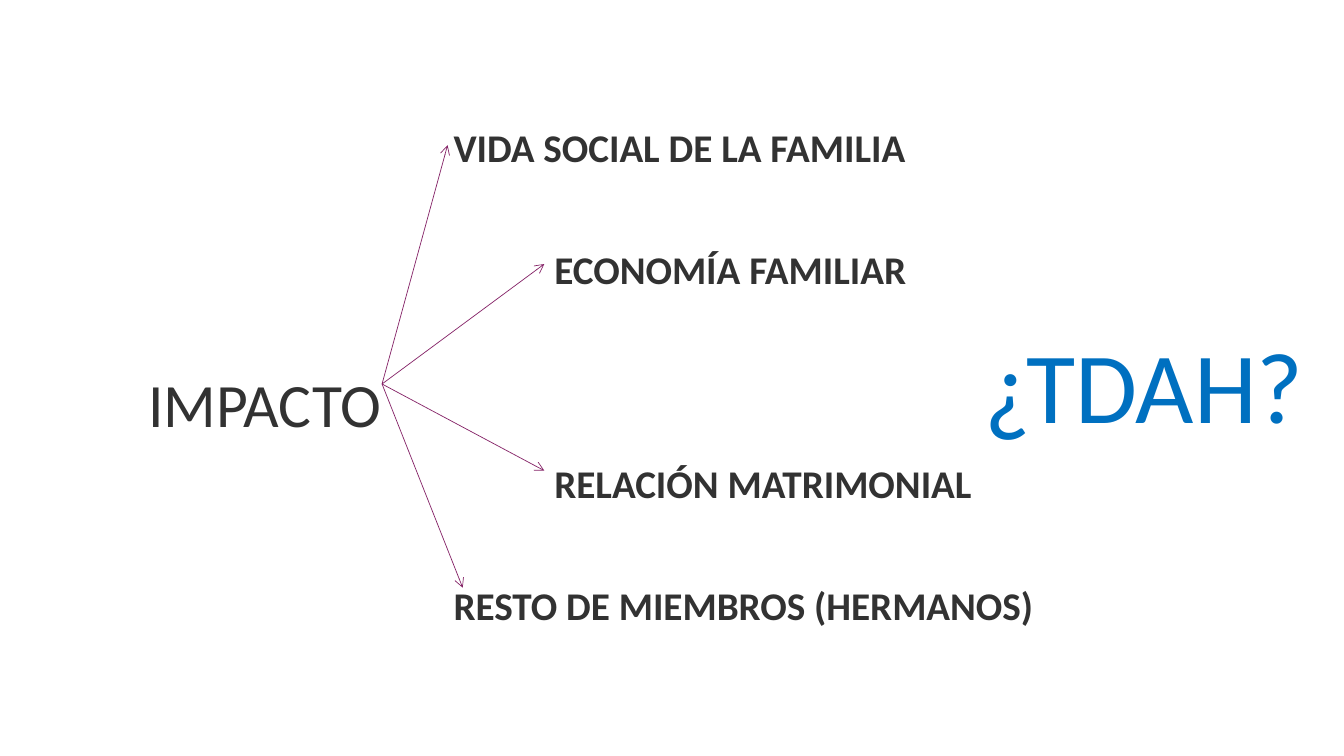
from dataclasses import dataclass

from lxml.etree import SubElement
from pptx import Presentation
from pptx.dml.color import RGBColor
from pptx.enum.shapes import MSO_CONNECTOR
from pptx.enum.text import MSO_ANCHOR
from pptx.oxml.ns import qn
from pptx.slide import Slide
from pptx.text.text import TextFrame
from pptx.util import Pt

DARK = RGBColor(0x32, 0x32, 0x32)
BLUE = RGBColor(0x00, 0x70, 0xC0)
PLUM = RGBColor(0x85, 0x23, 0x67)
FONT = "Calibri"

ARROW_START = (272.9, 274.3)
NEAR, FAR = 218, 290  # indents of the affected areas


@dataclass(frozen=True)
class Line:
    text: str
    indent: float = 0
    before: float = 0
    size: float = 28
    bold: bool = True


LINES = [
    Line("VIDA SOCIAL DE LA FAMILIA", NEAR),
    Line("ECONOMÍA FAMILIAR", FAR, 57),
    Line("IMPACTO", before=58, size=44, bold=False),
    Line("RELACIÓN MATRIMONIAL", FAR, 17),
    Line("RESTO DE MIEMBROS (HERMANOS)", NEAR, 57),
]
ARROW_ENDS = [(319.7, 103.7), (388.8, 188.6), (388.8, 336.2), (330.5, 419.8)]


def add_box(slide: Slide, left: float, top: float, width: float, height: float) -> TextFrame:
    tf = slide.shapes.add_textbox(Pt(left), Pt(top), Pt(width), Pt(height)).text_frame
    tf.word_wrap = True
    tf.vertical_anchor = MSO_ANCHOR.TOP
    return tf


def write(tf: TextFrame, text: str, *, size: float, color: RGBColor, bold: bool = False,
          indent: float = 0, before: float = 0, spacing: float = 1.0) -> None:
    """Fill the empty first paragraph, or add one after the last."""
    p = tf.paragraphs[0] if not tf.text else tf.add_paragraph()
    p.line_spacing = spacing
    if before:
        p.space_before = Pt(before)
    if indent:
        p._p.get_or_add_pPr().set("marL", str(Pt(indent)))
    r = p.add_run()
    r.text = text
    r.font.name = FONT
    r.font.size = Pt(size)
    r.font.bold = bold
    r.font.color.rgb = color


def add_arrow(slide: Slide, start: tuple[float, float], end: tuple[float, float]) -> None:
    points = [Pt(v) for v in (*start, *end)]
    sp = slide.shapes.add_connector(MSO_CONNECTOR.STRAIGHT, *points)
    sp.line.color.rgb = PLUM
    sp.line.width = Pt(0.5)
    SubElement(sp.line._get_or_add_ln(), qn("a:tailEnd"), type="arrow")
    SubElement(sp._element.spPr, qn("a:effectLst"))


def main() -> None:
    prs = Presentation()
    prs.slide_width, prs.slide_height = Pt(960), Pt(540)
    slide = prs.slides.add_slide(prs.slide_layouts[6])

    tf = add_box(slide, 102, 92, 756, 393)
    tf.margin_left = Pt(4)
    tf.margin_top = tf.margin_bottom = 0
    for line in LINES:
        write(tf, line.text, size=line.size, color=DARK, bold=line.bold,
              indent=line.indent, before=line.before, spacing=0.9)

    for end in ARROW_ENDS:
        add_arrow(slide, ARROW_START, end)

    write(add_box(slide, 696.2, 226.8, 246.2, 94.3), "¿TDAH?", size=72, color=BLUE)
    prs.save("out.pptx")


if __name__ == "__main__":
    main()
